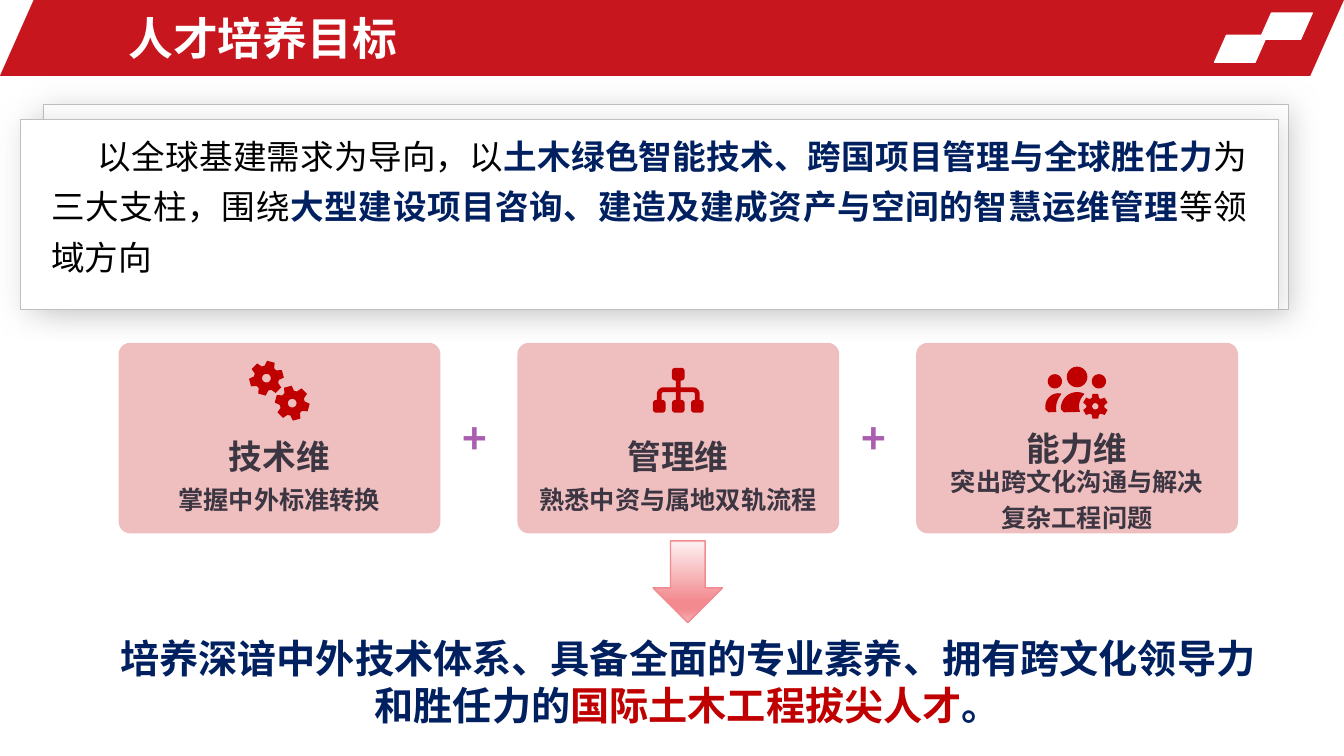
from math import cos, radians, sin

from lxml import etree
from pptx import Presentation
from pptx.dml.color import RGBColor
from pptx.enum.shapes import MSO_SHAPE as Shp
from pptx.enum.text import MSO_ANCHOR as Anchor, PP_ALIGN as Al
from pptx.oxml import parse_xml
from pptx.oxml.ns import nsdecls, qn
from pptx.util import Cm, Pt

C = {"red": "C8161E", "deep": "C00000", "navy": "002060", "white": "FFFFFF",
     "black": "000000", "ink": "3C3542", "plus": "A95EAF", "edge": "BFBFBF",
     "arrow": "F28A8F", "shadow": "808080", "blush": "FEF2F3", "rose": "F6B1B4"}
SANS, LATIN = "Noto Sans CJK SC", "Arial"

TITLE = "人才培养目标"
LEAD = [("以全球基建需求为导向，以", False),
        ("土木绿色智能技术、跨国项目管理与全球胜任力", True),
        ("为三大支柱，围绕", False),
        ("大型建设项目咨询、建造及建成资产与空间的智慧运维管理", True),
        ("等领域方向", False)]
CARDS = [("技术维", 10.9, ["掌握中外标准转换"]),
         ("管理维", 10.9, ["熟悉中资与属地双轨流程"]),
         ("能力维", 10.69, ["突出跨文化沟通与解决", "复杂工程问题"])]
GOAL = [[("培养深谙中外技术体系、具备全面的专业素养、拥有跨文化领导力", "navy")],
        [("和胜任力的", "navy"), ("国际土木工程拔尖人才", "deep"), ("。", "navy")]]
BANNER = [(0, 0, 33.87, 1.91, "red"), (31.75, 0.33, 1.32, 0.66, "white"),
          (30.61, 0.89, 1.32, 0.68, "white")]
PANELS = [(1.09, 2.62, 31.37, 5.18), (0.51, 3, 31.7, 4.8)]
GRADIENT = [(0, "blush"), (74, "arrow"), (83, "arrow"), (100, "rose")]
CARD_X, CARD_Y, CARD_W, CARD_H, PITCH = 2.99, 8.64, 8.11, 4.8, 10.05

prs = Presentation()
prs.slide_width, prs.slide_height = Cm(33.87), Cm(19.05)
slide = prs.slides.add_slide(prs.slide_layouts[5])
shapes = slide.shapes


def rgb(name):
    return RGBColor.from_string(C[name])


def paint(sp, fill, line=None, width=1):
    sp.shadow.inherit = False
    sp.fill.solid()
    sp.fill.fore_color.rgb = rgb(fill)
    if line:
        sp.line.color.rgb = rgb(line)
        sp.line.width = Pt(width)
    else:
        sp.line.fill.background()
    return sp


def preset(kind, x, y, w, h, fill, line=None, width=1):
    sp = shapes.add_shape(kind, Cm(x), Cm(y), Cm(w), Cm(h))
    return paint(sp, fill, line, width)


def style(font, size, color=None, bold=None, face=SANS):
    font.size, font.bold, font.name = Pt(size), bold, face
    if color:
        font.color.rgb = rgb(color)
    ea = etree.SubElement(font._element, qn("a:ea"))
    ea.set("typeface", face)


def textbox(x, y, w, h, margin=None):
    tf = shapes.add_textbox(Cm(x), Cm(y), Cm(w), Cm(h)).text_frame
    tf.word_wrap = True
    if margin is not None:
        tf.margin_left = tf.margin_right = tf.margin_top = tf.margin_bottom = margin
        tf.vertical_anchor = Anchor.MIDDLE
    return tf


def label(x, y, w, h, lines, size, color, align=Al.CENTER, spacing=1.2):
    tf = textbox(x, y, w, h, 0)
    for i, line in enumerate(lines):
        p = tf.add_paragraph() if i else tf.paragraphs[0]
        p.text, p.alignment, p.line_spacing = line, align, spacing
        style(p.font, size, color, True)


def arc(cx, cy, r, start, end, steps=12):
    angles = [radians(start + (end - start) * i / steps) for i in range(steps + 1)]
    return [(cx + r * cos(a), cy + r * sin(a)) for a in angles]


def disc(cx, cy, r):
    return arc(cx, cy, r, 360, 0, 24)


def block(cx, cy, half=0.16, r=0.08):
    corners = ((1, 1), (-1, 1), (-1, -1), (1, -1))
    return [pt for k, (sx, sy) in enumerate(corners)
            for pt in arc(cx + sx * (half - r), cy + sy * (half - r), r,
                          90 * k, 90 * k + 90, 4)]


def gear(cx, cy, r, tilt):
    rim = []
    for k in range(6):
        for offset, share in ((-23, 0.72), (-13, 1), (13, 1), (23, 0.72)):
            rim += arc(cx, cy, r * share, tilt + 60 * k + offset, 0, 1)[:1]
    return [rim, disc(cx, cy, r * 0.25)]


def gears_icon(cx):
    return gear(cx - 0.33, 9.53, 0.44, -75) + gear(cx + 0.32, 10.16, 0.44, -105)


def tree_icon(cx):
    half = [(-0.06, 9.59), (-0.06, 9.76), *arc(-0.37, 9.93, 0.17, 270, 180, 5),
            (-0.54, 10.08), (-0.42, 10.08), *arc(-0.37, 9.93, 0.05, 180, 270, 5),
            (-0.06, 9.88), (-0.06, 10.08)]
    branch = half + [(-dx, y) for dx, y in reversed(half)]
    return [[(cx + dx, y) for dx, y in branch], block(cx, 9.43)] + [
        block(cx + dx, 10.24) for dx in (-0.48, 0, 0.48)]


def team_icon(cx):
    heads = [disc(cx, 9.5, 0.26), disc(cx - 0.56, 9.61, 0.18), disc(cx + 0.55, 9.61, 0.18)]
    bodies = [arc(cx - 0.47, 10.24, 0.33, 180, 283) + arc(cx, 10.29, 0.53, 217, 170),
              arc(cx, 10.29, 0.41, 180, 295) + arc(cx + 0.46, 10.24, 0.41, 227, 160)]
    for body, left in zip(bodies, (cx - 0.8, cx - 0.41)):
        body += [(left + 0.08, 10.39), (left, 10.31)]
    return heads + bodies + gear(cx + 0.46, 10.24, 0.32, -90)


def draw_icon(contours):
    emu = [[(Cm(x), Cm(y)) for x, y in contour] for contour in contours]
    fb = shapes.build_freeform(*emu[0][0], scale=1.0)
    for i, pts in enumerate(emu):
        if i:
            fb.move_to(*pts[0])
        fb.add_line_segments(pts[1:], close=True)
    paint(fb.convert_to_shape(), "deep")


for x, y, w, h, color in BANNER:
    sp = preset(Shp.PARALLELOGRAM, x, y, w, h, color, None if color == "red" else color)
    sp.adjustments[0] = 0.444

title = shapes.title
title.left, title.top, title.width, title.height = Cm(2.98), Cm(0.05), Cm(19.66), Cm(1.78)
tf = title.text_frame
tf.vertical_anchor = Anchor.MIDDLE
p = tf.paragraphs[0]
p.text, p.alignment = TITLE, Al.LEFT
style(p.font, 32, "white", True, LATIN)
shapes._spTree.append(title._element)

tf = textbox(0.52, 15.87, 33.63, 2.64)
for i, parts in enumerate(GOAL):
    p = tf.add_paragraph() if i else tf.paragraphs[0]
    p.alignment = Al.CENTER
    style(p.font, 28, bold=True)
    for text, color in parts:
        r = p.add_run()
        r.text = text
        r.font.color.rgb = rgb(color)

icons = (gears_icon, tree_icon, team_icon)
for i, ((heading, heading_y, details), icon) in enumerate(zip(CARDS, icons)):
    x = CARD_X + i * PITCH
    card = preset(Shp.ROUNDED_RECTANGLE, x, CARD_Y, CARD_W, CARD_H, "deep")
    card.adjustments[0] = 0.06
    tint = card._element.spPr.find(qn("a:solidFill"))[0]
    etree.SubElement(tint, qn("a:alpha")).set("val", "25000")
    draw_icon(icon(x + CARD_W / 2))
    label(x + 0.38, heading_y, 7.34, 0.99, [heading], 24, "ink")
    label(x + 0.43, 12.16, 7.24, 0.71, details, 18, "ink")
    if i:
        label(x - 1.39, 10.39, 1.35, 1.27, ["+"], 30, "plus", Al.LEFT, 1)

arrow = preset(Shp.DOWN_ARROW, 16.46, 13.63, 1.75, 2.06, "arrow", "arrow")
stops = "".join(f'<a:gs pos="{pos * 1000}"><a:srgbClr val="{C[name]}"/></a:gs>'
                for pos, name in GRADIENT)
spPr = arrow._element.spPr
spPr.replace(spPr.find(qn("a:solidFill")), parse_xml(
    f'<a:gradFill {nsdecls("a")}><a:gsLst>{stops}</a:gsLst>'
    '<a:lin ang="5400000" scaled="0"/></a:gradFill>'))

for box in PANELS:
    panel = preset(Shp.RECTANGLE, *box, "white", "edge", 0.5)
    effects = panel._element.spPr.find(qn("a:effectLst"))
    effects.append(parse_xml(
        f'<a:outerShdw {nsdecls("a")} blurRad="{Pt(20)}" dist="{Pt(3)}" dir="2700000">'
        f'<a:srgbClr val="{C["shadow"]}"><a:alpha val="25000"/></a:srgbClr></a:outerShdw>'))

p = textbox(1.04, 3.04, 30.64, 4.11).paragraphs[0]
p.alignment, p.line_spacing = Al.JUSTIFY, 1.25
p._p.get_or_add_pPr().set("indent", str(Cm(1.18)))
style(p.font, 24, face=LATIN)
for text, strong in LEAD:
    r = p.add_run()
    r.text, r.font.bold = text, strong
    r.font.color.rgb = rgb("navy" if strong else "black")

prs.save("out.pptx")
